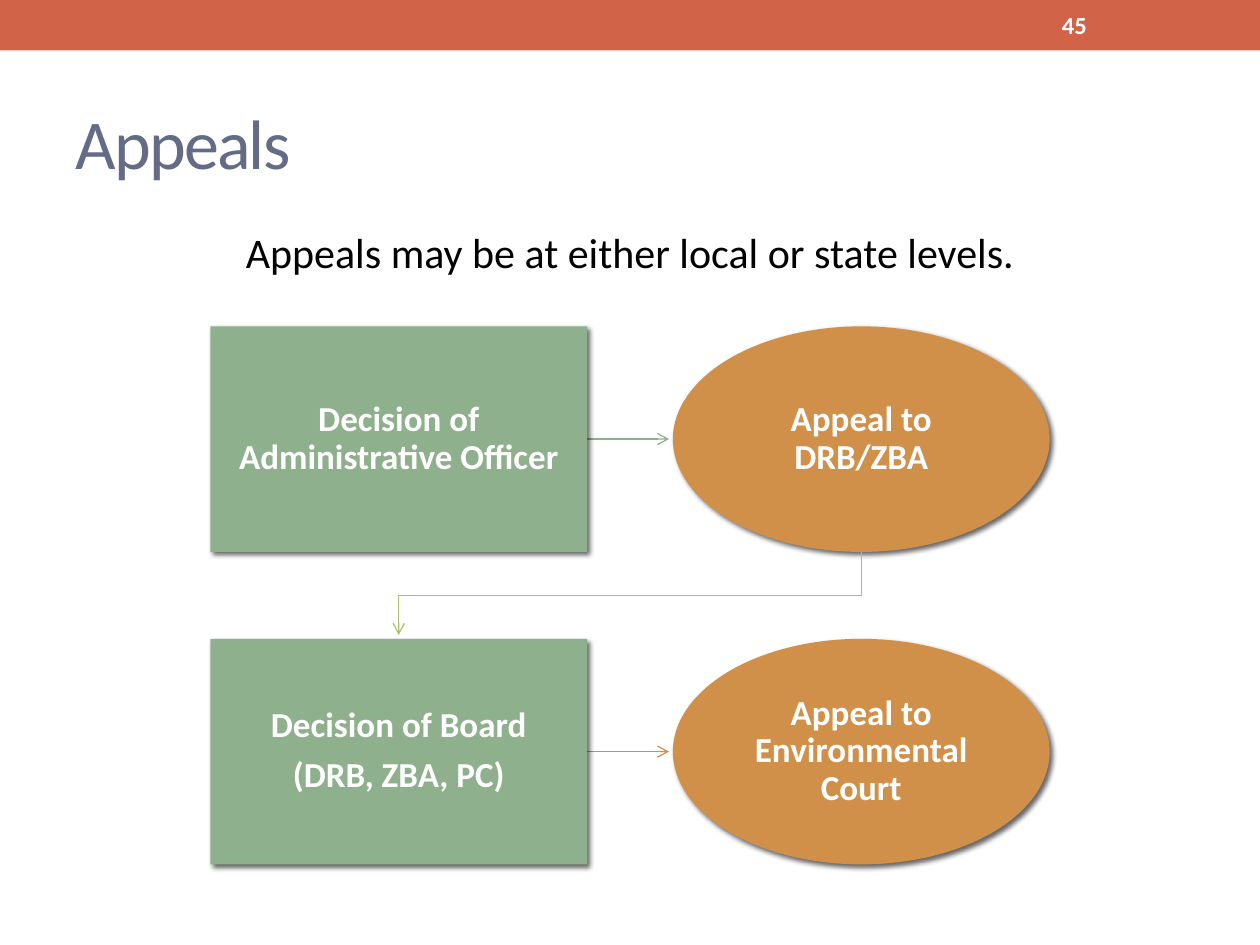
from lxml.etree import SubElement
from pptx import Presentation
from pptx.dml.color import RGBColor
from pptx.enum.shapes import MSO_CONNECTOR, MSO_SHAPE
from pptx.enum.text import MSO_ANCHOR, PP_ALIGN
from pptx.oxml.ns import qn
from pptx.util import Inches, Pt

COLORS = {"banner": "D16349", "title": "646B86", "body": "000000", "white": "FFFFFF",
          "decision": "8FB08C", "appeal": "D19049", "return": "ADBF6C"}
FONT = "Calibri"

PAGE_NUMBER = "45"
TITLE = "Appeals"
INTRO = "Appeals may be at either local or state levels."
# Each row: decision, the appeal that follows it, colour of the arrow between them
STEPS = [
    (["Decision of Administrative Officer"], ["Appeal to DRB/ZBA"], "decision"),
    (["Decision of Board", "(DRB, ZBA, PC)"], ["Appeal to Environmental Court"], "appeal"),
]

WIDTH, HEIGHT = 10, 7.5
MARGIN = WIDTH * 0.05
NODE_W, NODE_H = 2.99, 1.79
LEFT, TOP = 1.67, 2.59
COLUMN_STEP, ROW_STEP = 3.67, 2.48
ARROW_GAP = 0.03
NODE_INSET = 0.16


def rgb(name):
    return RGBColor.from_string(COLORS[name])


def write(shape, paragraphs, *, size, color, bold=False, align=PP_ALIGN.LEFT,
          anchor=MSO_ANCHOR.MIDDLE, inset=None, line_spacing=None, after=0, tracking=0):
    frame = shape.text_frame
    frame.word_wrap = True
    frame.vertical_anchor = anchor
    if inset is not None:
        frame.margin_left = frame.margin_right = Inches(inset)
        frame.margin_top = frame.margin_bottom = Inches(inset)
    for i, words in enumerate(paragraphs):
        para = frame.add_paragraph() if i else frame.paragraphs[0]
        para.alignment = align
        para.line_spacing = line_spacing
        para.space_after = Pt(after)
        run = para.add_run()
        run.text = words
        run.font.name, run.font.size, run.font.bold = FONT, Pt(size), bold
        run.font.color.rgb = rgb(color)
        if tracking:
            run.font._element.set("spc", str(tracking * 100))


def add_textbox(slide, words, left, top, width, height, **style):
    box = slide.shapes.add_textbox(*map(Inches, (left, top, width, height)))
    write(box, [words], **style)


def add_block(slide, kind, color, left, top, width, height):
    block = slide.shapes.add_shape(kind, *map(Inches, (left, top, width, height)))
    block.fill.solid()
    block.fill.fore_color.rgb = rgb(color)
    block.line.fill.background()
    block.shadow.inherit = False
    return block


def cast_shadow(block):
    effects = block._element.spPr.find(qn("a:effectLst"))
    shadow = SubElement(effects, qn("a:outerShdw"), blurRad=str(Pt(3)), dist=str(Pt(2)),
                        dir=str(45 * 60000), algn="tl", rotWithShape="0")
    black = SubElement(shadow, qn("a:srgbClr"), val="000000")
    SubElement(black, qn("a:alpha"), val="60000")


def finish_arrow(arrow, color):
    """Colour the line, put an open head on its end and drop the theme shadow."""
    arrow.line.color.rgb = rgb(color)
    arrow.line.width = Pt(0.75)
    SubElement(arrow.line._get_or_add_ln(), qn("a:tailEnd"), type="arrow")
    SubElement(arrow._element.spPr, qn("a:effectLst"))


def add_flow(slide):
    right = LEFT + COLUMN_STEP
    for row, (decision, appeal, arrow_color) in enumerate(STEPS):
        top = TOP + row * ROW_STEP
        middle = top + NODE_H / 2
        arrow = slide.shapes.add_connector(
            MSO_CONNECTOR.STRAIGHT, Inches(LEFT + NODE_W), Inches(middle),
            Inches(right - ARROW_GAP), Inches(middle))
        finish_arrow(arrow, arrow_color)
        for words, kind, color, left in (
                (decision, MSO_SHAPE.RECTANGLE, "decision", LEFT),
                (appeal, MSO_SHAPE.OVAL, "appeal", right)):
            node = add_block(slide, kind, color, left, top, NODE_W, NODE_H)
            cast_shadow(node)
            write(node, words, size=20, color="white", bold=True, align=PP_ALIGN.CENTER,
                  inset=NODE_INSET, line_spacing=0.9, after=7)

    # Elbow from the first appeal back to the second decision
    start_x, end_x = right + NODE_W / 2, LEFT + NODE_W / 2
    start_y, next_top = TOP + NODE_H, TOP + ROW_STEP
    bend_y = (start_y + next_top) / 2
    pen = slide.shapes.build_freeform(Inches(start_x), Inches(start_y))
    pen.add_line_segments(
        [(Inches(x), Inches(y)) for x, y in
         ((start_x, bend_y), (end_x, bend_y), (end_x, next_top - ARROW_GAP))], close=False)
    elbow = pen.convert_to_shape()
    elbow.fill.background()
    finish_arrow(elbow, "return")


def main():
    deck = Presentation()
    deck.slide_width, deck.slide_height = Inches(WIDTH), Inches(HEIGHT)
    slide = deck.slides.add_slide(deck.slide_layouts[6])
    content_w = WIDTH - 2 * MARGIN

    add_block(slide, MSO_SHAPE.RECTANGLE, "banner", 0, 0, WIDTH, 0.4)
    add_textbox(slide, PAGE_NUMBER, 8.33, 0.02, 1.17, 0.36,
                size=14, color="white", bold=True)
    add_textbox(slide, TITLE, MARGIN, 0.58, content_w, 1.08,
                size=40, color="title", tracking=-1)
    add_textbox(slide, INTRO, MARGIN, 1.75, content_w, 0.6, size=24, color="body",
                align=PP_ALIGN.CENTER, anchor=MSO_ANCHOR.TOP)
    add_flow(slide)
    deck.save("out.pptx")


if __name__ == "__main__":
    main()
